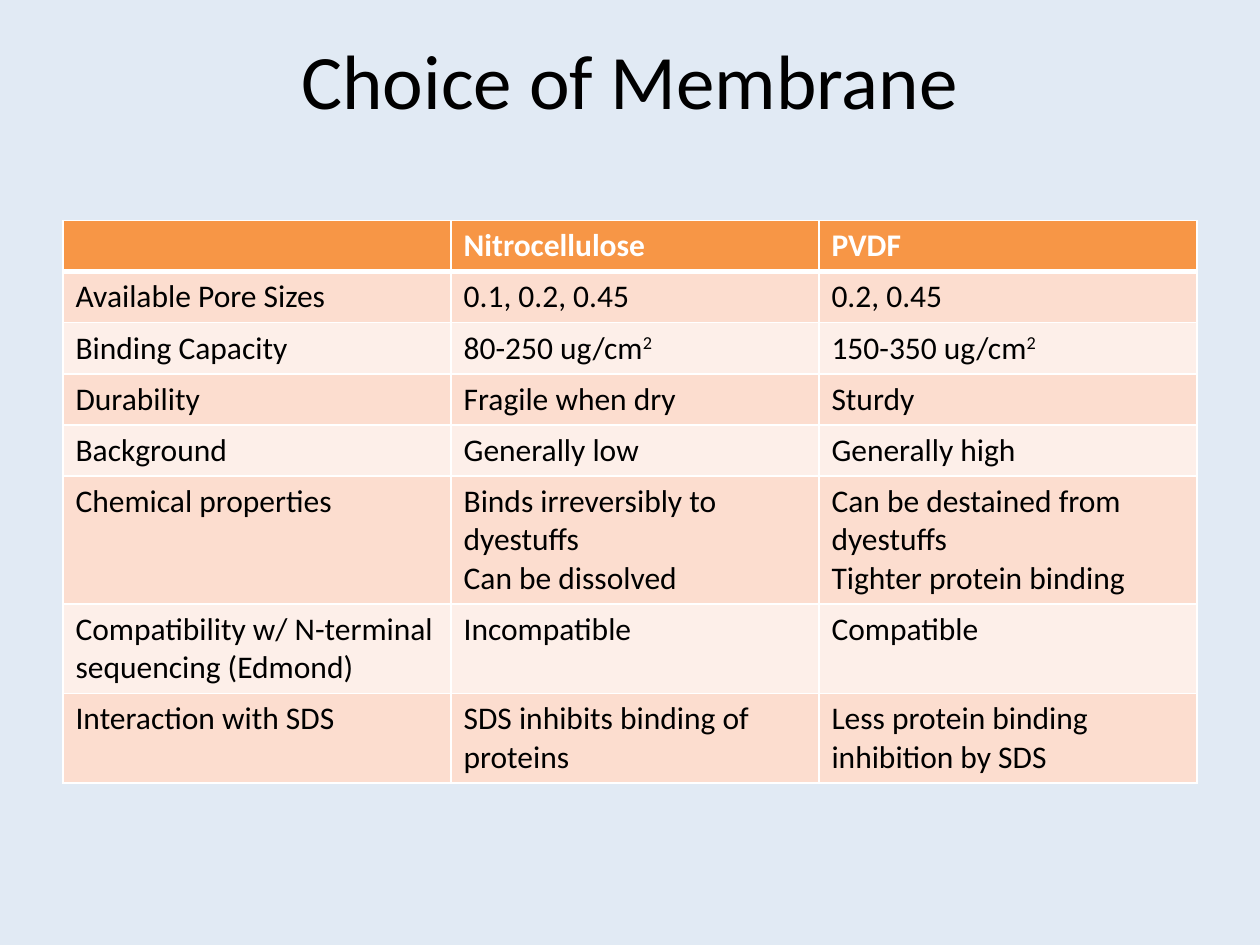
from dataclasses import dataclass

from lxml.etree import SubElement as Sub
from pptx import Presentation
from pptx.dml.color import RGBColor
from pptx.enum.text import MSO_ANCHOR as Anchor, PP_ALIGN as Align
from pptx.oxml.ns import qn
from pptx.util import Inches, Pt

BACK = RGBColor(0xE1, 0xEA, 0xF4)
HEAD = RGBColor(0xF7, 0x96, 0x46)
BANDS = (RGBColor(0xFD, 0xEF, 0xE9), RGBColor(0xFC, 0xDD, 0xCF))
BLACK = RGBColor(0, 0, 0)
WHITE = RGBColor(0xFF, 0xFF, 0xFF)
FONT = "Calibri"
COLS = (3.08, 2.92, 3)
TALL = {1: 0.4, 2: 0.71, 3: 1.01}


@dataclass
class Row:
    cells: tuple[str, str, str]
    lines: int = 1


ROWS = [
    Row(("", "Nitrocellulose", "PVDF")),
    Row(("Available Pore Sizes", "0.1, 0.2, 0.45", "0.2, 0.45")),
    Row(("Binding Capacity", "80-250 ug/cm^2", "150-350 ug/cm^2")),
    Row(("Durability", "Fragile when dry", "Sturdy")),
    Row(("Background", "Generally low", "Generally high")),
    Row(("Chemical properties",
         "Binds irreversibly to dyestuffs\nCan be dissolved",
         "Can be destained from dyestuffs\nTighter protein binding"), 3),
    Row(("Compatibility w/ N-terminal sequencing (Edmond)",
         "Incompatible", "Compatible"), 2),
    Row(("Interaction with SDS", "SDS inhibits binding of proteins",
         "Less protein binding inhibition by SDS"), 2),
]


def add_run(para, text: str, size: int, color: RGBColor,
            bold: bool = False, sup: bool = False) -> None:
    run = para.add_run()
    run.text = text
    font = run.font
    font.name, font.size, font.bold = FONT, Pt(size), bold
    font.color.rgb = color
    if sup:
        run._r.get_or_add_rPr().set("baseline", "30000")


def add_edge(cell, side: str, width: int) -> None:
    props = cell._tc.get_or_add_tcPr()
    line = Sub(props, qn(f"a:ln{side}"), w=str(Pt(width)))
    fill = Sub(line, qn("a:solidFill"))
    Sub(fill, qn("a:srgbClr"), val=str(WHITE))


def fill_cell(cell, text: str, index: int) -> None:
    head = index == 0
    for side in "LRTB":
        thick = (index, side) in ((0, "B"), (1, "T"))
        add_edge(cell, side, 3 if thick else 1)
    cell.fill.solid()
    cell.fill.fore_color.rgb = HEAD if head else BANDS[index % 2]
    frame = cell.text_frame
    for i, line in enumerate(text.split("\n") if text else []):
        para = frame.add_paragraph() if i else frame.paragraphs[0]
        for j, part in enumerate(line.split("^")):
            add_run(para, part, 18, WHITE if head else BLACK, head, j > 0)


def add_title(slide, text: str) -> None:
    title = slide.shapes.title
    title.left, title.top = Inches(0.5), Inches(0)
    title.width, title.height = Inches(9), Inches(1.25)
    frame = title.text_frame
    frame.vertical_anchor = Anchor.MIDDLE
    para = frame.paragraphs[0]
    para.alignment = Align.CENTER
    add_run(para, text, 44, BLACK)


def add_grid(slide, rows: list[Row]) -> None:
    high = sum(TALL[row.lines] for row in rows)
    grid = slide.shapes.add_table(
        len(rows), len(COLS), Inches(0.5), Inches(1.75),
        Inches(sum(COLS)), Inches(high)).table
    for col, width in zip(grid.columns, COLS):
        col.width = Inches(width)
    for i, row in enumerate(rows):
        grid.rows[i].height = Inches(TALL[row.lines])
        for j, text in enumerate(row.cells):
            fill_cell(grid.cell(i, j), text, i)


def main() -> None:
    deck = Presentation()
    deck.slide_width, deck.slide_height = Inches(10), Inches(7.5)
    slide = deck.slides.add_slide(deck.slide_layouts[5])
    back = slide.background.fill
    back.solid()
    back.fore_color.rgb = BACK
    add_title(slide, "Choice of Membrane")
    add_grid(slide, ROWS)
    deck.save("out.pptx")


if __name__ == "__main__":
    main()
